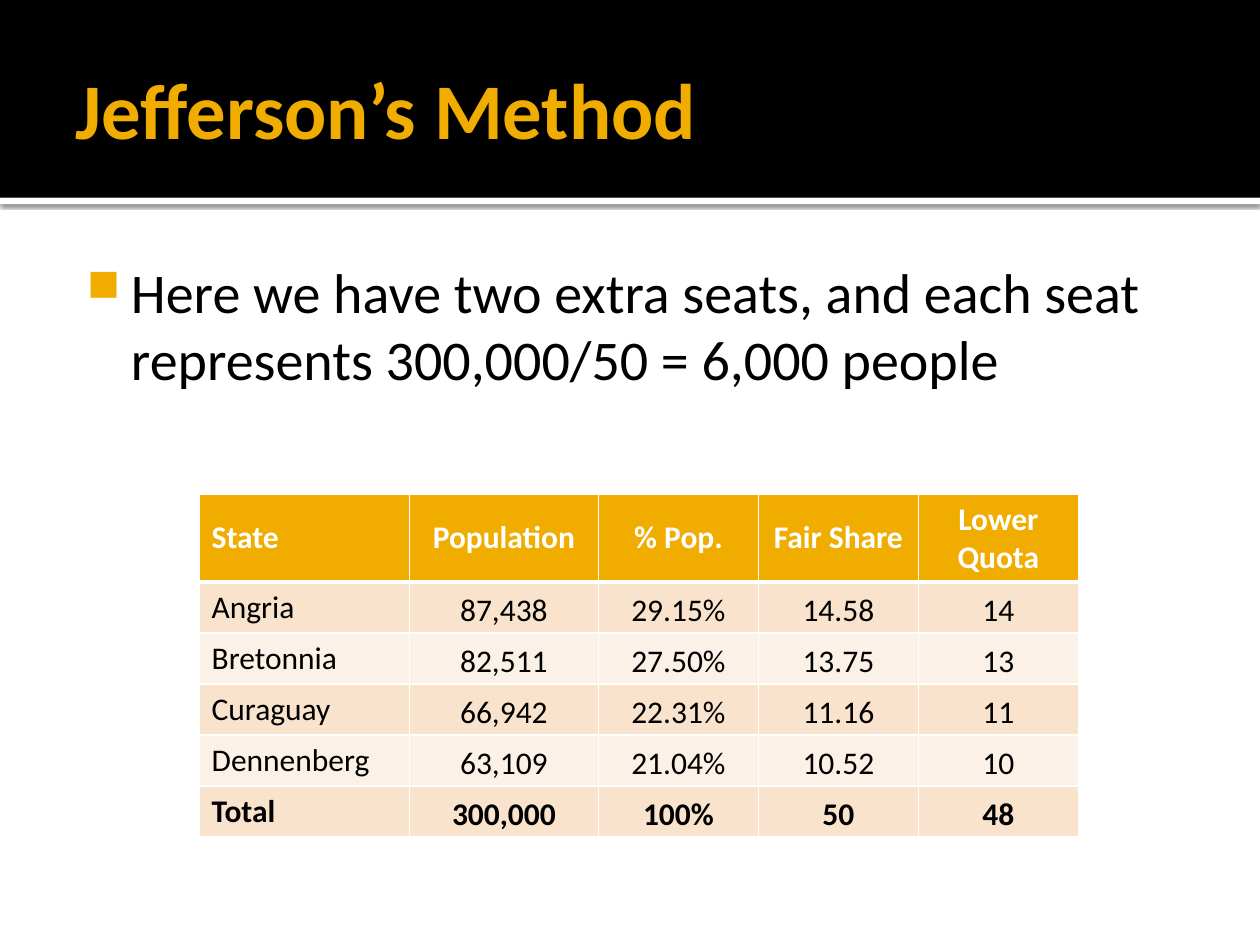
from pptx import Presentation
from pptx.dml.color import RGBColor
from pptx.enum.shapes import MSO_SHAPE
from pptx.enum.text import MSO_ANCHOR, PP_ALIGN
from pptx.oxml import parse_xml
from pptx.oxml.ns import nsdecls
from pptx.util import Inches, Pt

RECTANGLE = MSO_SHAPE.RECTANGLE
TOP, MIDDLE = MSO_ANCHOR.TOP, MSO_ANCHOR.MIDDLE
LEFT, CENTER = PP_ALIGN.LEFT, PP_ALIGN.CENTER

WIDTH, HEIGHT = Inches(10), Inches(7.5)
COLUMNS, ROWS = 20, 15
BLANK_LAYOUT = 6

SEATS = [
    ["State", "Population", "% Pop.", "Fair Share", "Lower Quota"],
    ["Angria", "87,438", "29.15%", "14.58", "14"],
    ["Bretonnia", "82,511", "27.50%", "13.75", "13"],
    ["Curaguay", "66,942", "22.31%", "11.16", "11"],
    ["Dennenberg", "63,109", "21.04%", "10.52", "10"],
    ["Total", "300,000", "100%", "50", "48"],
]


def color(value):
    return RGBColor.from_string(value)


def across(columns):
    return round(WIDTH * columns / COLUMNS)


def down(rows):
    return round(HEIGHT * rows / ROWS)


def apply(target, values):
    for name, value in values.items():
        setattr(target, name, value)


def margins(left, top, right, bottom):
    sides = zip(("left", "top", "right", "bottom"), (left, top, right, bottom))
    return {f"margin_{side}": Inches(size) for side, size in sides}


class SlideBuilder:
    """Places elements on one slide; positions count grid columns and rows."""

    font = "Calibri"
    gold, black, white = "F0AD00", "000000", "FFFFFF"
    bands = ("F9E3CC", "FCF1E7")

    def __init__(self, deck):
        self.page = deck.slides.add_slide(deck.slide_layouts[BLANK_LAYOUT])

    def band(self, top, height, fill, shadow=False):
        box = self.page.shapes.add_shape(RECTANGLE, 0, down(top), WIDTH, down(height))
        box.fill.solid()
        box.fill.fore_color.rgb = color(fill)
        box.line.fill.background()
        box.shadow.inherit = False
        if shadow:
            effects = box._element.spPr.find("{*}effectLst")
            effects.append(parse_xml(
                f'<a:outerShdw {nsdecls("a")} blurRad="{Pt(2.5)}" dist="{Pt(0.8)}" '
                f'dir="5400000" rotWithShape="0"><a:srgbClr val="{self.black}">'
                '<a:alpha val="60000"/></a:srgbClr></a:outerShdw>'))

    def add_span(self, para, text, size, ink, bold=False):
        span = para.add_run()
        span.text = text
        apply(span.font, {"name": self.font, "size": Pt(size), "bold": bold})
        span.font.color.rgb = color(ink)

    def text(self, left, top, width, height, frame_format):
        box = self.page.shapes.add_textbox(
            across(left), down(top), across(width), down(height))
        apply(box.text_frame, {"word_wrap": True, **frame_format})
        return box.text_frame.paragraphs[0]

    def bullet(self, para, indent, hanging):
        props = para._p.get_or_add_pPr()
        props.set("marL", str(Inches(indent)))
        props.set("indent", str(-Inches(hanging)))
        for element in (
            f'<a:buClr {nsdecls("a")}><a:srgbClr val="{self.gold}"/></a:buClr>',
            f'<a:buSzPct {nsdecls("a")} val="80000"/>',
            f'<a:buChar {nsdecls("a")} char="■"/>',
        ):
            props.append(parse_xml(element))

    def borders(self, cell, widths):
        props = cell._tc.get_or_add_tcPr()
        for side, width in widths.items():
            props.append(parse_xml(
                f'<a:ln{side} {nsdecls("a")} w="{Pt(width)}"><a:solidFill>'
                f'<a:srgbClr val="{self.white}"/></a:solidFill></a:ln{side}>'))

    def cell(self, cell, text, row, column, last_row):
        header, label = row == 0, column == 0
        self.borders(cell, {"L": 1, "R": 1, "T": 3 if row == 1 else 1,
                            "B": 3 if header else 1})
        cell.fill.solid()
        cell.fill.fore_color.rgb = color(
            self.gold if header else self.bands[(row - 1) % 2])
        cell.vertical_anchor = MIDDLE if header or not label else TOP
        para = cell.text_frame.paragraphs[0]
        para.alignment = LEFT if label else CENTER
        if not header and not label:
            apply(cell, margins(0.07, 0, 0.07, 0))
            para.line_spacing = 1.15
        self.add_span(para, text, 18, self.white if header else self.black,
                      header or row == last_row)

    def table(self, left, top, widths, heights, data):
        table = self.page.shapes.add_table(
            len(heights), len(widths), across(left), down(top),
            across(sum(widths)), down(sum(heights))).table
        for column, width in zip(table.columns, widths):
            column.width = across(width)
        for line, height in zip(table.rows, heights):
            line.height = down(height)
        for row, values in enumerate(data):
            for column, text in enumerate(values):
                self.cell(table.cell(row, column), text, row, column, len(data) - 1)


def main():
    deck = Presentation()
    apply(deck, {"slide_width": WIDTH, "slide_height": HEIGHT})
    slide = SlideBuilder(deck)

    slide.band(3.14, 0.1, slide.white, shadow=True)
    slide.band(0, 3.14, slide.black)

    title = slide.text(1, 0.34, 18, 2.74, {
        "vertical_anchor": MIDDLE, **margins(0.1, 0.05, 0.05, 0.05)})
    slide.add_span(title, "Jefferson’s Method", 45, slide.gold, bold=True)

    body = slide.text(1, 3.88, 18, 10.12, {
        "vertical_anchor": TOP, **margins(0.06, 0.1, 0.1, 0.05)})
    slide.bullet(body, 0.48, 0.35)
    slide.add_span(body, "Here we have two extra seats, and each seat represents "
                   "300,000/50 = 6,000 people", 32, slide.black)

    slide.table(3.16, 7.84, [3.34, 3] + [2.54] * 3, [1.4] + [0.81] * 5, SEATS)
    deck.save("out.pptx")


if __name__ == "__main__":
    main()
